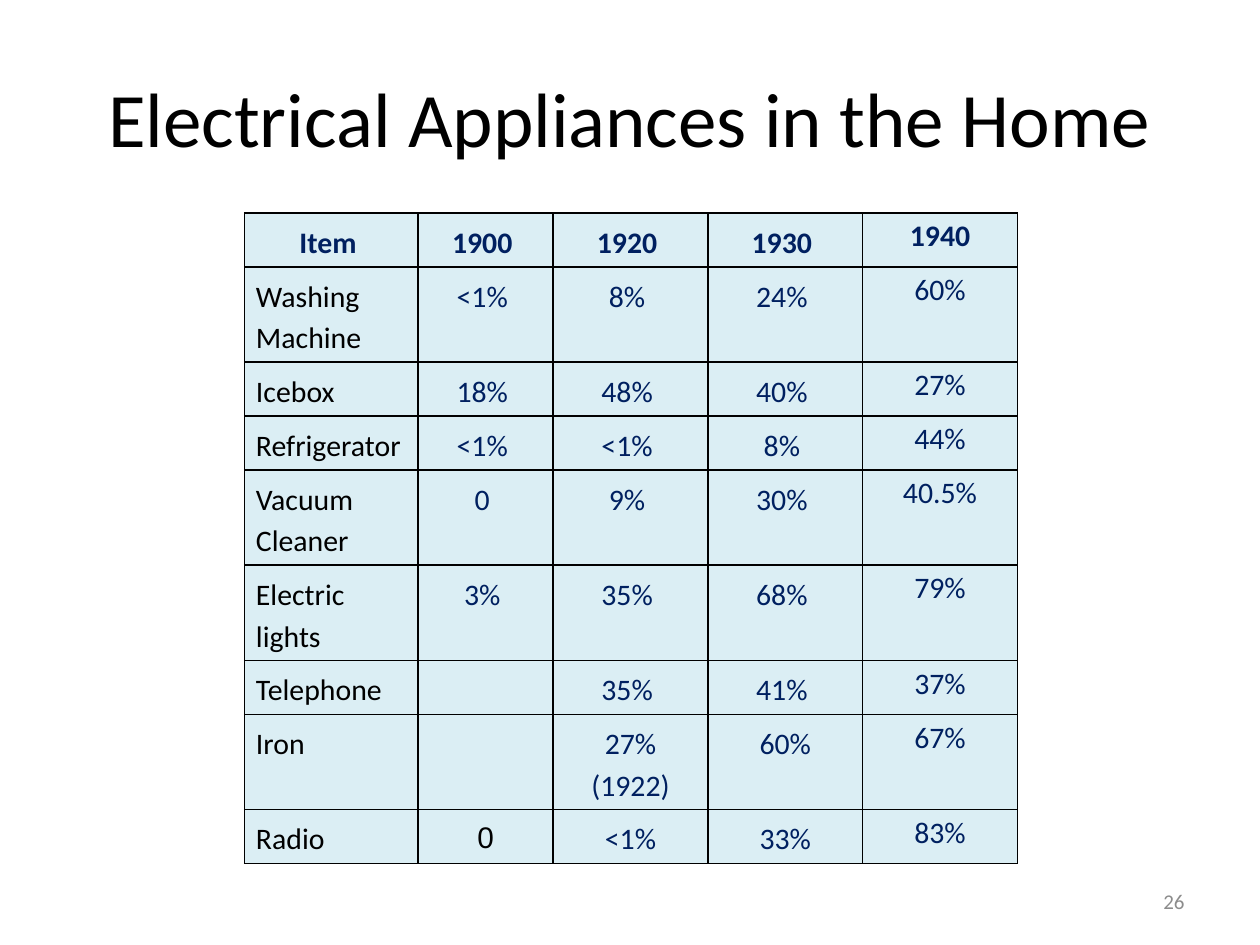
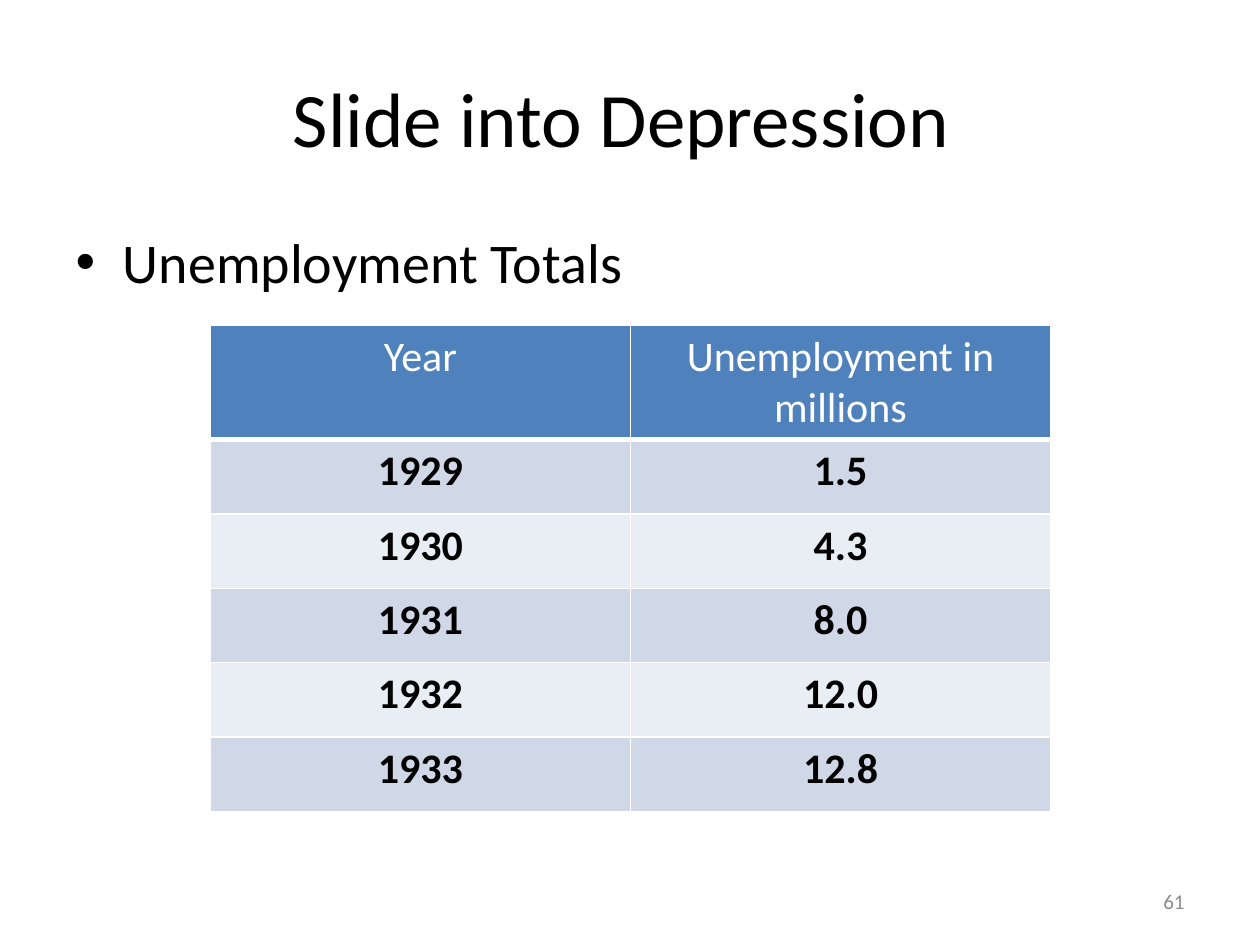
from dataclasses import dataclass

from lxml import etree
from pptx import Presentation
from pptx.dml.color import RGBColor
from pptx.enum.text import MSO_ANCHOR, PP_ALIGN
from pptx.oxml.ns import qn
from pptx.util import Cm, Pt

LEFT, CENTER, RIGHT = PP_ALIGN.LEFT, PP_ALIGN.CENTER, PP_ALIGN.RIGHT
TOP, MIDDLE = MSO_ANCHOR.TOP, MSO_ANCHOR.MIDDLE
TITLE_AND_CONTENT, TITLE_ONLY = 1, 5


@dataclass(frozen=True)
class Theme:
    font: str = "Calibri"
    alt_font: str = "Arial"
    black: str = "000000"
    white: str = "FFFFFF"
    navy: str = "002060"
    gray: str = "8C8C8C"
    pale_aqua: str = "DBEEF4"
    header_blue: str = "4F81BD"
    band_dark: str = "D0D8E8"
    band_light: str = "E9EDF4"
    title_size: int = 44
    bullet_size: int = 32
    data_size: int = 24
    appliance_size: int = 17
    number_size: int = 12


THEME = Theme()

APPLIANCES = [
    ["Item ", "1900 ", "1920 ", "1930 ", "1940"],
    ["Washing Machine", "<1% ", "8% ", "24% ", "60%"],
    ["Icebox", "18% ", "48% ", "40% ", "27%"],
    ["Refrigerator", "<1% ", "<1% ", "8% ", "44%"],
    ["Vacuum Cleaner", "0 ", "9% ", "30% ", "40.5%"],
    ["Electric lights", "3% ", "35% ", "68% ", "79%"],
    ["Telephone", "", "35% ", "41% ", "37%"],
    ["Iron", "", "27% (1922)", "60%", "67%"],
    ["Radio", "0", "<1%", "33%", "83%"],
]
TWO_LINE_ITEMS = {"Washing Machine", "Vacuum Cleaner", "Electric lights", "Iron"}

UNEMPLOYMENT = [
    ["Year", "Unemployment in millions"],
    ["1929", "1.5"],
    ["1930", "4.3"],
    ["1931", "8.0"],
    ["1932", "12.0"],
    ["1933", "12.8"],
]


# Text
def write(frame, text, size, color=THEME.black, font=THEME.font, bold=False,
          align=LEFT, line_spacing=None):
    paragraph = frame.paragraphs[0]
    paragraph.alignment = align
    if line_spacing:
        paragraph.line_spacing = line_spacing
    run = paragraph.add_run()
    run.text = text
    run.font.name = font
    run.font.size = Pt(size)
    run.font.bold = bold
    run.font.color.rgb = RGBColor.from_string(color)


def place(shape, left, top, width, height):
    shape.left, shape.top = Cm(left), Cm(top)
    shape.width, shape.height = Cm(width), Cm(height)


# Parts shared by the slides
def add_titled_slide(prs, layout, title, number):
    slide = prs.slides.add_slide(prs.slide_layouts[layout])
    heading = slide.shapes.title
    place(heading, 1.27, 0.76, 22.86, 3.18)
    heading.text_frame.vertical_anchor = MIDDLE
    write(heading.text_frame, title, THEME.title_size, align=CENTER)

    page_number = slide.shapes.add_textbox(Cm(18.21), Cm(17.65), Cm(5.92), Cm(1.02))
    page_number.text_frame.word_wrap = True
    page_number.text_frame.vertical_anchor = MIDDLE
    write(page_number.text_frame, str(number), THEME.number_size,
          color=THEME.gray, align=RIGHT)
    return slide


def add_bullet(slide, text):
    body = slide.placeholders[1]
    place(body, 1.27, 4.45, 22.86, 12.57)
    body.text_frame.vertical_anchor = TOP
    write(body.text_frame, text, THEME.bullet_size)


# Tables
def set_border(cell, side, color, width):
    line = etree.SubElement(cell._tc.get_or_add_tcPr(), qn(f"a:ln{side}"),
                            w=str(Pt(width)))
    fill = etree.SubElement(line, qn("a:solidFill"))
    etree.SubElement(fill, qn("a:srgbClr"), val=color)


def style_cell(cell, fill, border, bottom_width=1):
    for side in "LRT":
        set_border(cell, side, border, 1)
    set_border(cell, "B", border, bottom_width)
    cell.fill.solid()
    cell.fill.fore_color.rgb = RGBColor.from_string(fill)


def add_grid(slide, left, top, widths, heights):
    frame = slide.shapes.add_table(len(heights), len(widths), Cm(left), Cm(top),
                                   Cm(sum(widths)), Cm(sum(heights)))
    grid = frame.table
    grid.first_row = grid.horz_banding = False
    for column, width in zip(grid.columns, widths):
        column.width = Cm(width)
    for row, height in zip(grid.rows, heights):
        row.height = Cm(height)
    return grid


def appliance_format(row, col, text):
    if row == 0:
        return dict(color=THEME.navy, bold=True, align=CENTER)
    if col == 0:
        return dict(color=THEME.black)
    if text == "0":
        return dict(font=THEME.alt_font, align=CENTER)
    return dict(color=THEME.navy, align=CENTER)


def add_appliance_table(slide):
    heights = [1.92 if item in TWO_LINE_ITEMS else 1.07 for item, *_ in APPLIANCES]
    grid = add_grid(slide, 4.93, 4.29, [3.5, 2.72] + [3.12] * 3, heights)
    last_col = len(APPLIANCES[0]) - 1
    for row, values in enumerate(APPLIANCES):
        for col, text in enumerate(values):
            cell = grid.cell(row, col)
            side, edge = (0, 0) if col == last_col else (0.23, 0.13)
            cell.margin_left = cell.margin_right = Cm(side)
            cell.margin_top = cell.margin_bottom = Cm(edge)
            style_cell(cell, THEME.pale_aqua, THEME.black)
            if text:
                write(cell.text_frame, text, THEME.appliance_size, line_spacing=1.15,
                      **appliance_format(row, col, text))


def add_unemployment_table(slide):
    heights = [2.31] + [1.5] * (len(UNEMPLOYMENT) - 1)
    grid = add_grid(slide, 4.24, 6.55, [8.47] * 2, heights)
    for row, values in enumerate(UNEMPLOYMENT):
        is_header = row == 0
        band = THEME.band_dark if row % 2 else THEME.band_light
        for col, text in enumerate(values):
            cell = grid.cell(row, col)
            style_cell(cell, THEME.header_blue if is_header else band, THEME.white,
                       bottom_width=3 if is_header else 1)
            write(cell.text_frame, text, THEME.data_size, bold=not is_header,
                  color=THEME.white if is_header else THEME.black, align=CENTER)


def main():
    prs = Presentation()
    prs.slide_width, prs.slide_height = Cm(25.4), Cm(19.05)

    # Appliance ownership by year
    appliances = add_titled_slide(prs, TITLE_ONLY,
                                  "Electrical Appliances in the Home", 26)
    add_appliance_table(appliances)

    # Unemployment by year
    depression = add_titled_slide(prs, TITLE_AND_CONTENT,
                                  "Slide into Depression ", 61)
    add_bullet(depression, "Unemployment Totals")
    add_unemployment_table(depression)

    prs.save("out.pptx")


if __name__ == "__main__":
    main()
